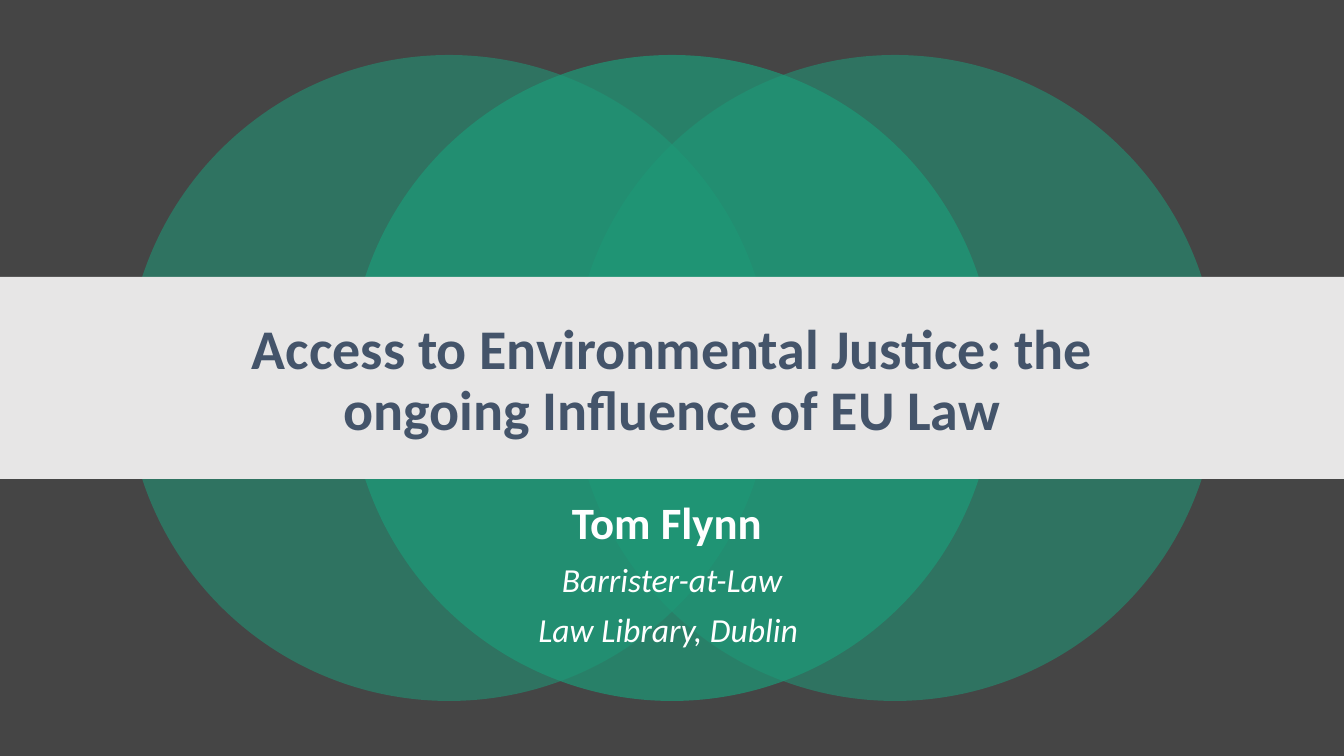
from dataclasses import dataclass

from lxml import etree
from pptx import Presentation
from pptx.dml.color import RGBColor
from pptx.enum.shapes import MSO_SHAPE
from pptx.enum.text import MSO_ANCHOR, MSO_AUTO_SIZE, PP_ALIGN
from pptx.oxml.ns import qn
from pptx.util import Emu, Pt

ELLIPSE, RECTANGLE = MSO_SHAPE.OVAL, MSO_SHAPE.RECTANGLE
TOP, MIDDLE = MSO_ANCHOR.TOP, MSO_ANCHOR.MIDDLE
CENTER = PP_ALIGN.CENTER
NO_AUTOFIT = MSO_AUTO_SIZE.NONE

EMU_PER_PX = 914400 / 100.8
SLIDE_WIDTH, SLIDE_HEIGHT = 1344, 756
TEXT_LEFT, TEXT_WIDTH = 168, 1008
CIRCLE_SIZE, CIRCLE_STEP = 646, 223
FONT = "Calibri"
CHARCOAL, GREEN, PALE_GREY = "454545", "1D9A78", "E7E6E6"
SLATE, WHITE = "44546A", "FFFFFF"


@dataclass(frozen=True)
class Box:
    left: int
    top: int
    width: int
    height: int

    def emu(self) -> list[Emu]:
        return [px(n) for n in (self.left, self.top, self.width, self.height)]


@dataclass(frozen=True)
class Circle:
    column: int
    opacity: int


@dataclass(frozen=True)
class Line:
    text: str
    size: int
    bold: bool = False
    italic: bool = False


CIRCLES = [Circle(-1, 55), Circle(1, 55), Circle(0, 70)]
SPEAKER = [
    Line("Tom Flynn ", 32, bold=True),
    Line("Barrister-at-Law", 24, italic=True),
    Line("Law Library, Dublin ", 24, italic=True),
]
HEADING = [Line("Access to Environmental Justice: the ongoing Influence of EU Law", 40, bold=True)]


def px(length: int) -> Emu:
    return Emu(round(length * EMU_PER_PX))


def paint(fill, color: str, opacity: int = 100) -> None:
    fill.solid()
    fill.fore_color.rgb = RGBColor.from_string(color)
    if opacity < 100:
        for srgb in fill._xPr.iter(qn("a:srgbClr")):
            etree.SubElement(srgb, qn("a:alpha"), val=str(opacity * 1000))


def add_block(slide, kind, box: Box, color: str, opacity: int = 100) -> None:
    block = slide.shapes.add_shape(kind, *box.emu())
    block.shadow.inherit = False
    block.line.fill.background()
    paint(block.fill, color, opacity)


def write(frame, lines: list[Line], *, color: str, anchor=TOP, space_before: int = 0) -> None:
    frame.word_wrap = True
    frame.auto_size = NO_AUTOFIT
    frame.vertical_anchor = anchor
    for index, line in enumerate(lines):
        paragraph = frame.add_paragraph() if index else frame.paragraphs[0]
        paragraph.alignment = CENTER
        paragraph.line_spacing = 0.9
        paragraph.space_before = Pt(space_before)
        run = paragraph.add_run()
        run.text = line.text
        run.font.name = FONT
        run.font.size = Pt(line.size)
        run.font.bold = line.bold
        run.font.italic = line.italic
        run.font.color.rgb = RGBColor.from_string(color)


def main() -> None:
    deck = Presentation()
    deck.slide_width, deck.slide_height = px(SLIDE_WIDTH), px(SLIDE_HEIGHT)
    slide = deck.slides.add_slide(deck.slide_layouts[5])
    paint(slide.background.fill, CHARCOAL)

    middle_left = (SLIDE_WIDTH - CIRCLE_SIZE) // 2
    circle_top = (SLIDE_HEIGHT - CIRCLE_SIZE) // 2
    for circle in CIRCLES:
        left = middle_left + circle.column * CIRCLE_STEP
        box = Box(left, circle_top, CIRCLE_SIZE, CIRCLE_SIZE)
        add_block(slide, ELLIPSE, box, GREEN, circle.opacity)

    speaker = slide.shapes.add_textbox(*Box(TEXT_LEFT, 496, TEXT_WIDTH, 84).emu())
    write(speaker.text_frame, SPEAKER, color=WHITE, space_before=10)

    add_block(slide, RECTANGLE, Box(0, 277, SLIDE_WIDTH, 202), PALE_GREY)

    heading = slide.shapes.title
    heading.left, heading.top, heading.width, heading.height = Box(TEXT_LEFT, 306, TEXT_WIDTH, 152).emu()
    write(heading.text_frame, HEADING, color=SLATE, anchor=MIDDLE)
    slide.shapes.element.append(heading.element)

    deck.save("out.pptx")


if __name__ == "__main__":
    main()
